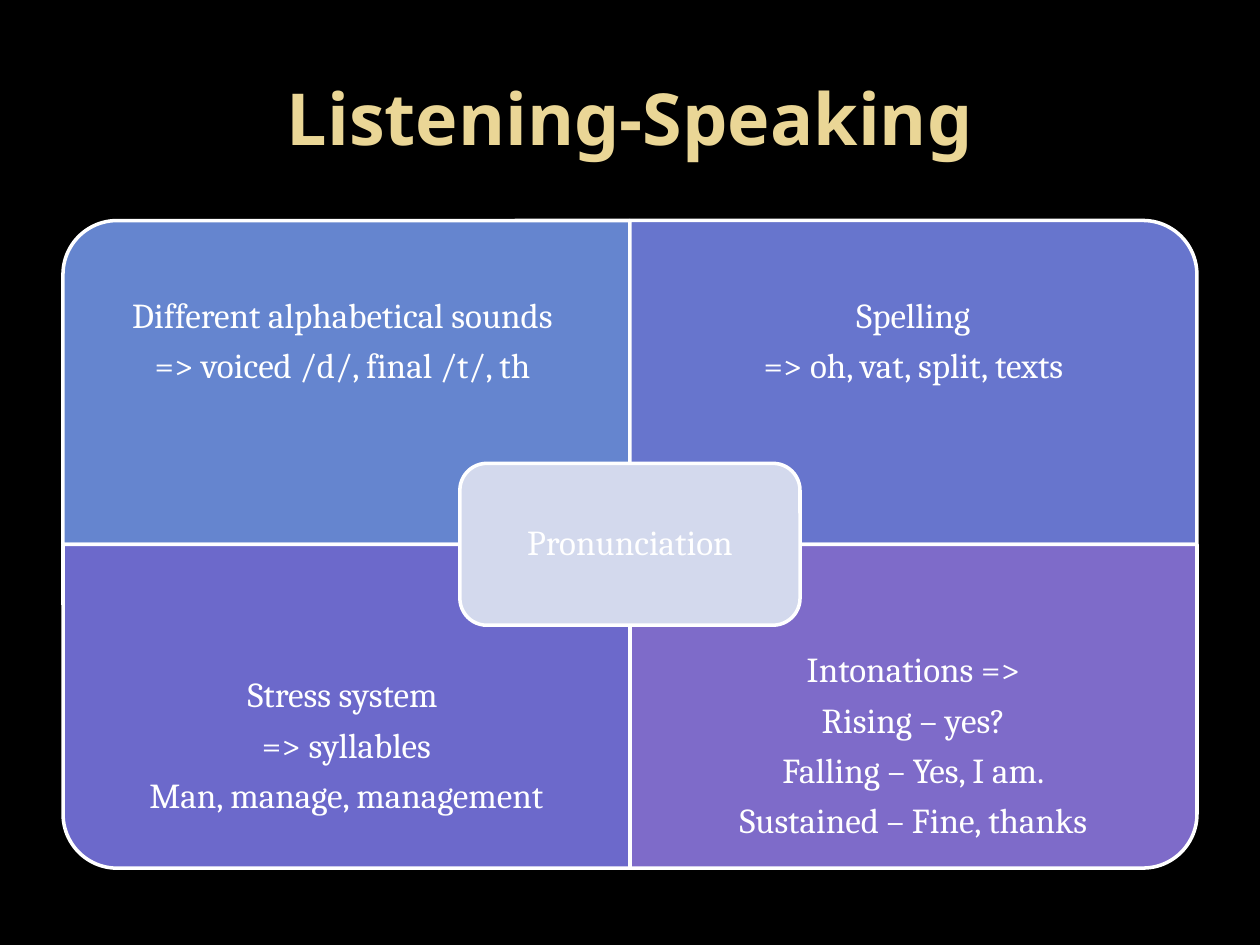
from pptx import Presentation
from pptx.dml.color import RGBColor
from pptx.enum.shapes import MSO_SHAPE
from pptx.enum.text import MSO_ANCHOR, PP_ALIGN
from pptx.util import Inches, Pt

COLORS = {
    "background": "000000",
    "title": "EAD696",
    "white": "FFFFFF",
    "sounds": "6585CF",
    "spelling": "6775CD",
    "stress": "6C69CB",
    "intonation": "7E6BC9",
    "center": "D3D9ED",
}
TITLE_FONT = {"name": "Noto Sans", "size": Pt(41), "bold": True}
BODY_FONT = {"name": "Cambria", "size": Pt(20)}
BODY_SPACING = {"line_spacing": 0.9, "space_after": Pt(7)}

LEFT, TOP = 0.5, 1.75
QUAD_W, QUAD_H = 4.5, 2.57
LABEL_H = 0.75 * QUAD_H
CENTER_W, CENTER_H = 0.6 * QUAD_W, 0.5 * QUAD_H
CENTER_INSET = 0.06

# Column, row, rotation, colour name, lines
QUADRANTS = [
    (0, 0, 270, "sounds",
     ["Different alphabetical sounds ", "=> voiced /d/, final /t/, th "]),
    (1, 0, 0, "spelling", ["Spelling", "=> oh, vat, split, texts"]),
    (0, 1, 180, "stress",
     ["Stress system ", "=> syllables", "Man, manage, management"]),
    (1, 1, 90, "intonation",
     ["Intonations =>", "Rising – yes?", "Falling – Yes, I am.",
      "Sustained – Fine, thanks"]),
]


def rgb(name):
    return RGBColor.from_string(COLORS[name])


def apply_format(target, values):
    for attribute, value in values.items():
        setattr(target, attribute, value)


def add_label(slide, box, lines, font, color, margin, spacing):
    """Add centred text, one paragraph per line."""
    frame = slide.shapes.add_textbox(*map(Inches, box)).text_frame
    apply_format(frame, {"word_wrap": True, "vertical_anchor": MSO_ANCHOR.MIDDLE})
    for side in ("left", "top", "right", "bottom"):
        setattr(frame, f"margin_{side}", Inches(margin))
    frame.text = "\n".join(lines)
    for paragraph in frame.paragraphs:
        apply_format(paragraph, {"alignment": PP_ALIGN.CENTER, **spacing})
        for run in paragraph.runs:
            apply_format(run.font, font)
            run.font.color.rgb = rgb(color)


def add_panel(slide, preset, box, fill, rotation=0):
    """Add a white-edged panel that covers the box after its rotation."""
    left, top, width, height = box
    if rotation % 180:
        left += (width - height) / 2
        top += (height - width) / 2
        width, height = height, width
    panel = slide.shapes.add_shape(preset, *map(Inches, (left, top, width, height)))
    panel.rotation = rotation
    panel.shadow.inherit = False
    panel.fill.solid()
    panel.fill.fore_color.rgb = rgb(fill)
    panel.line.color.rgb = rgb("white")
    panel.line.width = Pt(2)


def add_quadrant(slide, column, row, rotation, fill, lines):
    left, top = LEFT + column * QUAD_W, TOP + row * QUAD_H
    add_panel(slide, MSO_SHAPE.ROUND_1_RECTANGLE,
              (left, top, QUAD_W, QUAD_H), fill, rotation)
    label_top = top + row * (QUAD_H - LABEL_H)
    add_label(slide, (left, label_top, QUAD_W, LABEL_H), lines,
              BODY_FONT, "white", 0.16, BODY_SPACING)


def add_center(slide, text):
    left = LEFT + QUAD_W - CENTER_W / 2
    top = TOP + QUAD_H - CENTER_H / 2
    add_panel(slide, MSO_SHAPE.ROUNDED_RECTANGLE,
              (left, top, CENTER_W, CENTER_H), "center")
    label_box = (left + CENTER_INSET, top + CENTER_INSET,
                 CENTER_W - 2 * CENTER_INSET, CENTER_H - 2 * CENTER_INSET)
    add_label(slide, label_box, [text], BODY_FONT, "white", 0.08, BODY_SPACING)


def main():
    presentation = Presentation()
    apply_format(presentation,
                 {"slide_width": Inches(10), "slide_height": Inches(7.5)})
    slide = presentation.slides.add_slide(presentation.slide_layouts[6])
    slide.background.fill.solid()
    slide.background.fill.fore_color.rgb = rgb("background")

    add_label(slide, (LEFT, 0.3, 2 * QUAD_W, 1.25), ["Listening-Speaking"],
              TITLE_FONT, "title", 0.05, {})
    for quadrant in QUADRANTS:
        add_quadrant(slide, *quadrant)
    add_center(slide, "Pronunciation")
    presentation.save("out.pptx")


if __name__ == "__main__":
    main()
